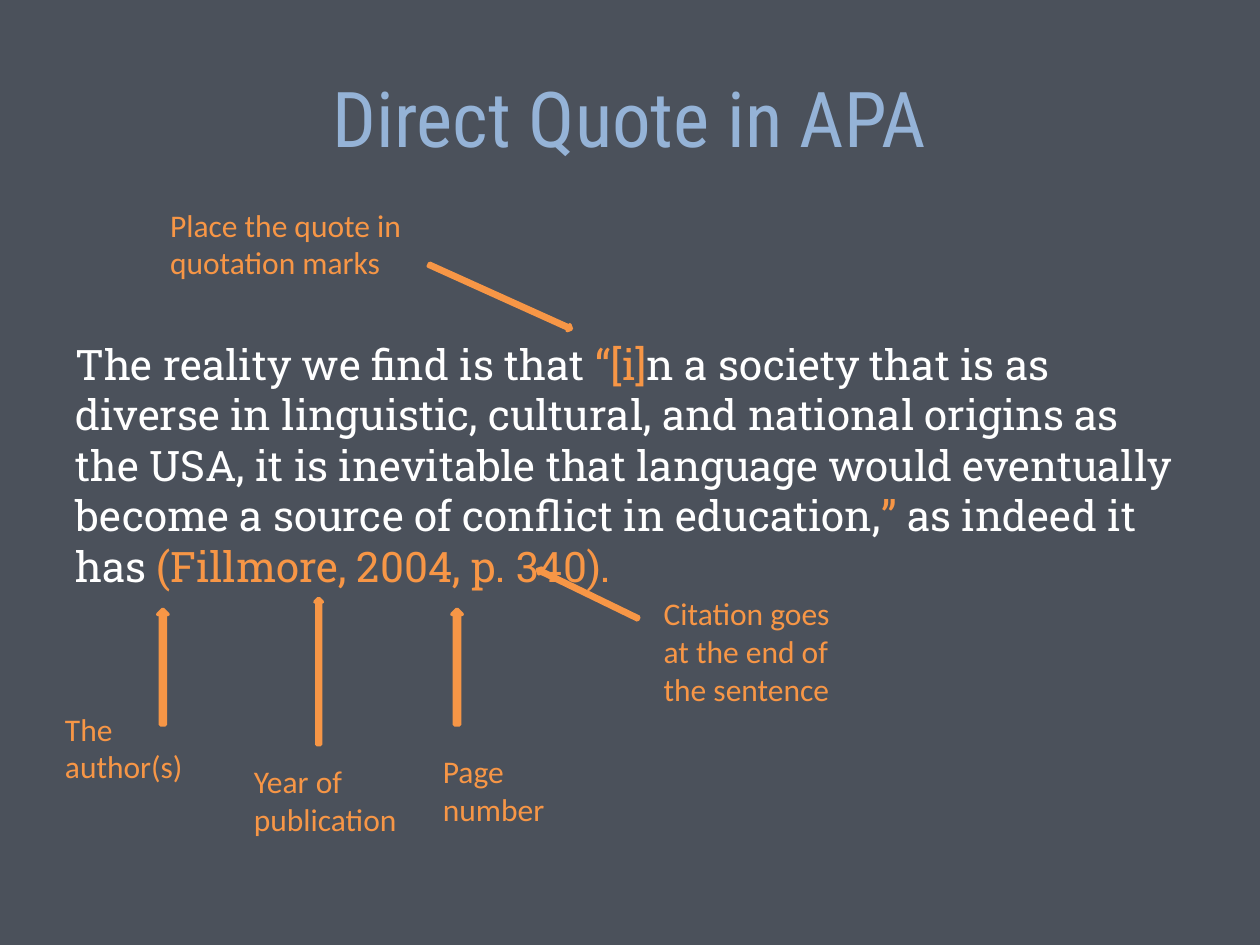
"""Build a slide that explains the parts of a direct quote in APA style."""
from pptx import Presentation
from pptx.dml.color import RGBColor
from pptx.enum.shapes import MSO_SHAPE as Shape
from pptx.enum.text import MSO_ANCHOR as Anchor, PP_ALIGN as Align
from pptx.util import Cm, Pt

ORANGE, WHITE, BLUE, SLATE = "F79646", "FFFFFF", "95B3D7", "4B515B"


def paint(target, color):
    if hasattr(target, "solid"):
        target.solid()
        target = target.fore_color
    target.rgb = RGBColor.from_string(color)


def add_text(page, place, spans, font, para_format, frame_format):
    box = page.shapes.add_textbox(*map(Cm, place))
    frame = box.text_frame
    for name, value in {"word_wrap": True, **frame_format}.items():
        setattr(frame, name, value)
    para = frame.paragraphs[0]
    for name, value in para_format.items():
        setattr(para, name, value)
    for words, color in spans:
        span = para.add_run()
        span.text = words
        for name, value in font.items():
            setattr(span.font, name, value)
        paint(span.font.color, color)


deck = Presentation()
deck.slide_width, deck.slide_height = Cm(25.4), Cm(19.05)
page = deck.slides.add_slide(deck.slide_layouts[6])
paint(page.background.fill, SLATE)

add_text(page, (1.27, 0.76, 22.86, 3.18), [("Direct Quote in APA", BLUE)],
         {"name": "Roboto Condensed", "size": Pt(44)},
         {"alignment": Align.CENTER}, {"vertical_anchor": Anchor.MIDDLE})

quote = [
    ("The reality we find is that ", WHITE),
    ("“[i]", ORANGE),
    ("n a society that is as diverse in linguistic, cultural, and national "
     "origins as the USA, it is inevitable that language would eventually "
     "become a source of conflict in education,", WHITE),
    ("”", ORANGE),
    (" as indeed it has ", WHITE),
    ("(Fillmore, 2004, p. 340).", ORANGE),
]
add_text(page, (1.27, 6.7, 22.86, 5.4), quote,
         {"name": "Roboto Slab", "size": Pt(24)},
         {"line_spacing": Pt(28.8)}, {})

labels = [
    ("Citation goes at the end of the sentence", 13.13, 11.86, 4.45, 2.57),
    ("The author(s)", 1.06, 14.18, 3.81, 1.8),
    ("Year of publication", 4.87, 15.24, 3.6, 1.8),
    ("Place the quote in quotation marks", 3.18, 4.02, 5.29, 1.8),
    ("Page number", 8.68, 15.03, 3.6, 1.8),
]
for words, *place in labels:
    add_text(page, place, [(words, ORANGE)],
             {"name": "Calibri", "size": Pt(18)}, {}, {})

arrows = [
    (2.12, 13.34, 2.33, 0.21, 270),
    (4.95, 13.46, 2.95, 0.15, 270),
    (10.72, 11.91, 2.26, 0.13, 205.9),
    (8.51, 5.92, 3.15, 0.13, 24.3),
    (8.05, 13.34, 2.33, 0.21, 270),
]
for *place, angle in arrows:
    arrow = page.shapes.add_shape(Shape.RIGHT_ARROW, *map(Cm, place))
    arrow.rotation = angle
    arrow.shadow.inherit = False
    paint(arrow.fill, ORANGE)
    paint(arrow.line.fill, ORANGE)
    arrow.line.width = Pt(2)

deck.save("out.pptx")
